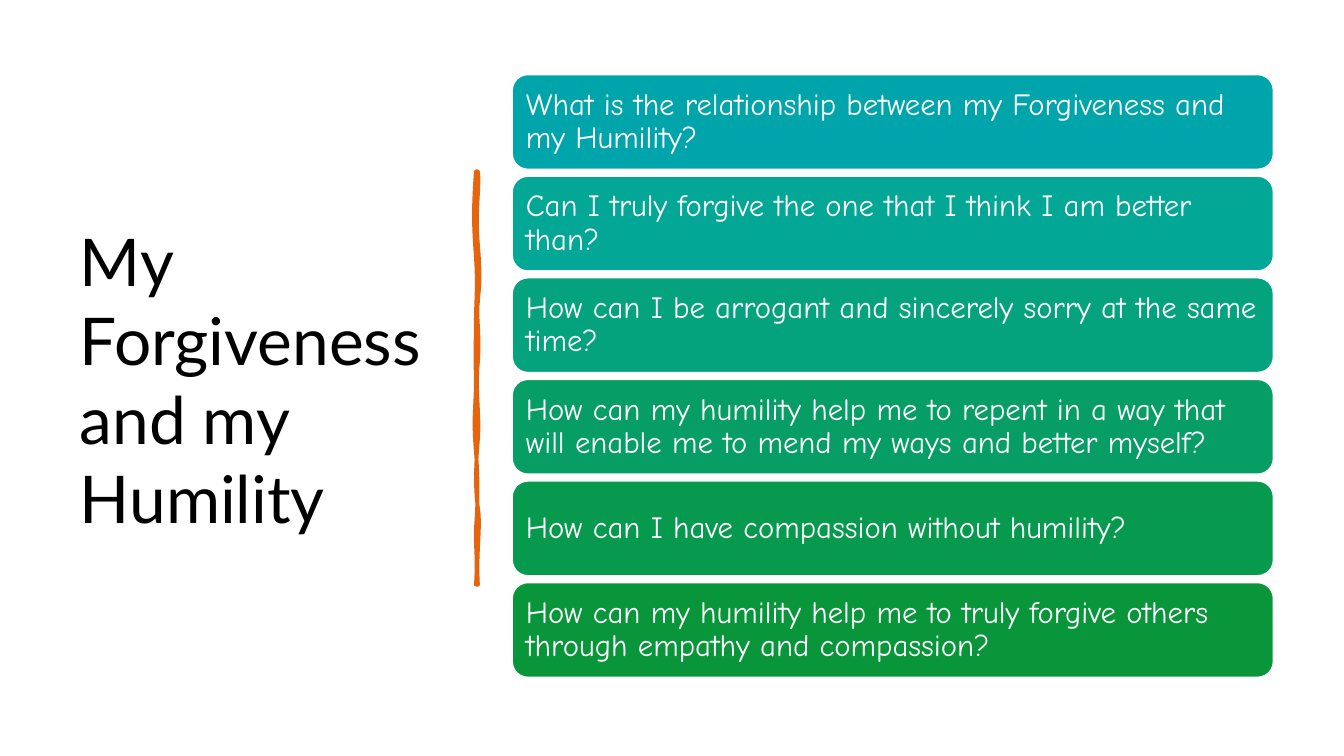
from dataclasses import dataclass

from lxml import etree
from pptx import Presentation
from pptx import util as u
from pptx.dml.color import RGBColor
from pptx.enum import shapes, text
from pptx.oxml import ns


@dataclass(frozen=True)
class Theme:
    background: str = "FFFFFF"
    title_color: str = "000000"
    card_text: str = "FFFFFF"
    accent: str = "E4650E"
    title_font: str = "Lato"
    card_font: str = "Comic Neue"
    title_size: float = 47
    card_size: float = 22
    brush_width: float = 2.75
    card_outline: float = 1


THEME = Theme()
SLIDE_WIDTH, SLIDE_HEIGHT = 13.33, 7.5

TITLE = "My Forgiveness and my Humility"

# Each question with the fill of its card
QUESTIONS = [
    ("What is the relationship between my Forgiveness and my Humility?", "00A5AB"),
    ("Can I truly forgive the one that I think I am better than?", "02A796"),
    ("How can I be arrogant and sincerely sorry at the same time?", "04A27D"),
    ("How can my humility help me to repent in a way that will enable me "
     "to mend my ways and better myself?", "069E65"),
    ("How can I have compassion without humility?", "079A4F"),
    ("How can my humility help me to truly forgive others through empathy "
     "and compassion?", "09963B"),
]

# Card column: equal steps from the first top to the last
CARD_LEFT, CARD_WIDTH, CARD_HEIGHT = 5.08, 7.55, 0.94
FIRST_TOP, LAST_TOP = 0.74, 5.78
CARD_PITCH = (LAST_TOP - FIRST_TOP) / (len(QUESTIONS) - 1)
CARD_INSET = 0.09

# Brush stroke: two control points and an end point for each cubic curve
BRUSH_START = (4.72, 1.7)
BRUSH_CURVES = [
    ((4.73, 1.7), (4.73, 1.7), (4.74, 1.7)),
    ((4.76, 1.86), (4.71, 2.07), (4.74, 2.43)),
    ((4.77, 2.79), (4.75, 2.85), (4.74, 2.99)),
    ((4.72, 3.13), (4.76, 3.31), (4.74, 3.59)),
    ((4.71, 3.87), (4.76, 4.13), (4.74, 4.36)),
    ((4.72, 4.58), (4.71, 4.85), (4.74, 5.04)),
    ((4.77, 5.23), (4.72, 5.48), (4.74, 5.8)),
    ((4.73, 5.8), (4.73, 5.8), (4.72, 5.8)),
    ((4.74, 5.54), (4.71, 5.36), (4.72, 5.24)),
    ((4.73, 5.13), (4.75, 4.83), (4.72, 4.48)),
    ((4.69, 4.13), (4.72, 4.06), (4.72, 3.75)),
    ((4.71, 3.45), (4.72, 3.41), (4.72, 3.19)),
    ((4.72, 2.98), (4.74, 2.85), (4.72, 2.55)),
    ((4.7, 2.26), (4.69, 2.12), (4.72, 1.7)),
]


def write_text(shape, content, *, font, size, color, inset, line_spacing=1.0):
    """Fill a shape with one left-aligned, vertically centred paragraph."""
    frame = shape.text_frame
    frame.word_wrap = True
    frame.auto_size = text.MSO_AUTO_SIZE.NONE
    frame.vertical_anchor = text.MSO_ANCHOR.MIDDLE
    frame.margin_left = frame.margin_right = u.Inches(inset)
    frame.margin_top = frame.margin_bottom = u.Inches(inset)
    paragraph = frame.paragraphs[0]
    paragraph.alignment = text.PP_ALIGN.LEFT
    paragraph.line_spacing = line_spacing
    run = paragraph.add_run()
    run.text = content
    run.font.name = font
    run.font.size = u.Pt(size)
    run.font.color.rgb = RGBColor.from_string(color)


def paint(shape, fill, line=None, line_width=0):
    shape.shadow.inherit = False
    shape.fill.solid()
    shape.fill.fore_color.rgb = RGBColor.from_string(fill)
    if line is None:
        shape.line.fill.background()
    else:
        shape.line.color.rgb = RGBColor.from_string(line)
        shape.line.width = u.Pt(line_width)


def add_box(slide, kind, left, top, width, height):
    return slide.shapes.add_shape(kind, u.Inches(left), u.Inches(top),
                                  u.Inches(width), u.Inches(height))


def add_backdrop(slide):
    backdrop = add_box(slide, shapes.MSO_SHAPE.RECTANGLE,
                       0, 0, SLIDE_WIDTH, SLIDE_HEIGHT)
    paint(backdrop, THEME.background)
    # Send it behind the title
    slide.shapes.title.element.addprevious(backdrop.element)


def place_title(slide):
    title = slide.shapes.title
    title.left, title.top = u.Inches(0.69), u.Inches(0.7)
    title.width, title.height = u.Inches(3.74), u.Inches(6.11)
    write_text(title, TITLE, font=THEME.title_font, size=THEME.title_size,
               color=THEME.title_color, inset=0.1)


def bend_segments(shape, curves):
    """Turn the straight segments of a freeform into cubic curves."""
    segments = list(shape.element.iter(ns.qn("a:lnTo")))
    for segment, curve in zip(segments, curves):
        bend = etree.Element(ns.qn("a:cubicBezTo"))
        for x, y in curve:
            etree.SubElement(bend, ns.qn("a:pt"),
                             x=str(u.Inches(x) - shape.left),
                             y=str(u.Inches(y) - shape.top))
        segment.getparent().replace(segment, bend)


def add_brush_stroke(slide):
    builder = slide.shapes.build_freeform(*map(u.Inches, BRUSH_START))
    builder.add_line_segments(
        [tuple(map(u.Inches, curve[-1])) for curve in BRUSH_CURVES], close=True)
    stroke = builder.convert_to_shape()
    bend_segments(stroke, BRUSH_CURVES)
    paint(stroke, THEME.accent, THEME.accent, THEME.brush_width)


def add_card(slide, index, question, fill):
    card = add_box(slide, shapes.MSO_SHAPE.ROUNDED_RECTANGLE, CARD_LEFT,
                   FIRST_TOP + index * CARD_PITCH, CARD_WIDTH, CARD_HEIGHT)
    paint(card, fill, THEME.background, THEME.card_outline)
    write_text(card, question, font=THEME.card_font, size=THEME.card_size,
               color=THEME.card_text, inset=CARD_INSET, line_spacing=0.9)


def main():
    presentation = Presentation()
    presentation.slide_width = u.Inches(SLIDE_WIDTH)
    presentation.slide_height = u.Inches(SLIDE_HEIGHT)
    slide = presentation.slides.add_slide(presentation.slide_layouts[5])

    # Backdrop, title and divider
    add_backdrop(slide)
    place_title(slide)
    add_brush_stroke(slide)

    # Question cards
    for index, (question, fill) in enumerate(QUESTIONS):
        add_card(slide, index, question, fill)

    presentation.save("out.pptx")


if __name__ == "__main__":
    main()
